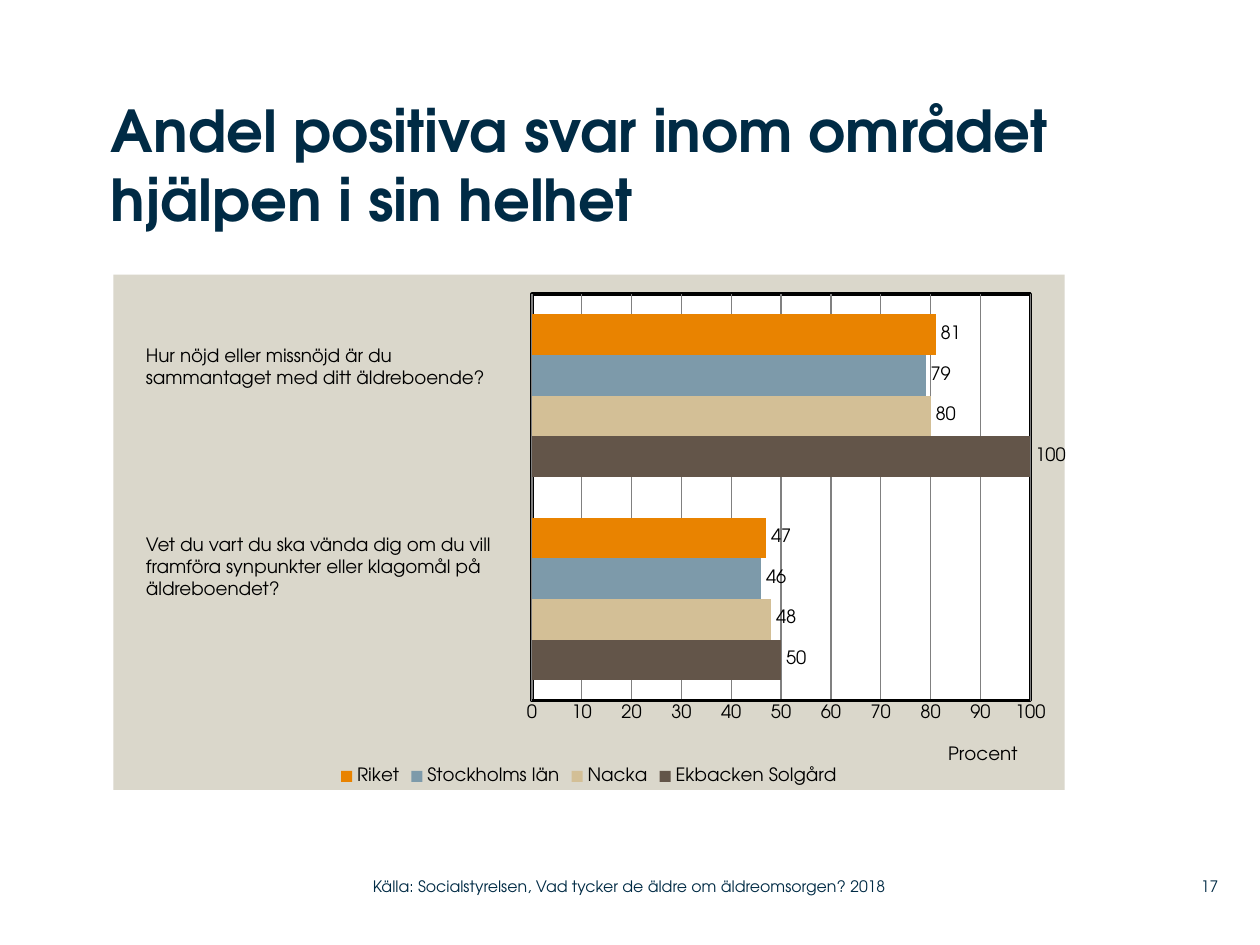
from dataclasses import dataclass

from lxml.etree import SubElement
from pptx import Presentation
from pptx.chart.data import CategoryChartData
from pptx.dml.color import RGBColor
from pptx.enum.chart import XL_CHART_TYPE, XL_LABEL_POSITION, XL_LEGEND_POSITION, XL_TICK_MARK
from pptx.enum.text import MSO_ANCHOR, MSO_AUTO_SIZE, PP_ALIGN
from pptx.oxml import parse_xml
from pptx.oxml.ns import nsdecls, qn
from pptx.util import Inches, Pt


@dataclass(frozen=True)
class Theme:
    font: str = "TeX Gyre Adventor"
    navy: RGBColor = RGBColor(0x00, 0x2B, 0x45)
    black: RGBColor = RGBColor(0, 0, 0)
    white: RGBColor = RGBColor(255, 255, 255)
    sand: RGBColor = RGBColor(0xDA, 0xD7, 0xCB)
    grid: RGBColor = RGBColor(0x80, 0x80, 0x80)
    series: tuple = ("635549", "D3BF96", "7D9AAA", "E98300")
    title: float = 33
    body: float = 10.5
    footer: float = 9


theme = Theme()
deck = Presentation()
deck.slide_width, deck.slide_height = Inches(10), Inches(7.5)
page = deck.slides.add_slide(deck.slide_layouts[5])


def style(font, size, color, bold=False):
    font.name, font.size, font.bold = theme.font, Pt(size), bold
    font.color.rgb = color


def write(box, text, size, color, bold=False, align=PP_ALIGN.LEFT, anchor=MSO_ANCHOR.TOP, inset=True):
    frame = box.text_frame
    frame.text = text
    frame.word_wrap = True
    frame.auto_size = MSO_AUTO_SIZE.NONE
    frame.vertical_anchor = anchor
    if not inset:
        frame.margin_left = frame.margin_right = frame.margin_top = frame.margin_bottom = 0
    for para in frame.paragraphs:
        para.alignment = align
        for span in para.runs:
            style(span.font, size, color, bold)


title = page.shapes.title
title.left, title.top, title.width, title.height = (Inches(n) for n in (0.88, 0.75, 7.6, 1.42))
write(title, "Andel positiva svar inom området hjälpen i sin helhet",
      theme.title, theme.navy, bold=True, inset=False)

# Chart: the first series is drawn lowest in each group
series_table = [
    ("Ekbacken Solgård", (50, 100)),
    ("Nacka", (48, 80)),
    ("Stockholms län", (46, 79)),
    ("Riket", (47, 81)),
]
data = CategoryChartData()
data.categories = ["1", "2"]
for name, values in series_table:
    data.add_series(name, values)
chart = page.shapes.add_chart(XL_CHART_TYPE.BAR_CLUSTERED, Inches(0.9), Inches(2.18),
                              Inches(7.56), Inches(4.09), data).chart
style(chart.font, theme.body, theme.black)
chart.has_title = False
chart.has_legend = True
chart.legend.position = XL_LEGEND_POSITION.BOTTOM
chart.legend.include_in_layout = False
style(chart.legend.font, theme.body, theme.black)

plot = chart.plots[0]
plot.gap_width, plot.overlap, plot.vary_by_categories = 100, 0, False
for series, color in zip(plot.series, theme.series):
    series.format.fill.solid()
    series.format.fill.fore_color.rgb = RGBColor.from_string(color)
    labels = series.data_labels
    labels.show_value = True
    labels.position = XL_LABEL_POSITION.OUTSIDE_END
    style(labels.font, theme.body, theme.black)

chart.category_axis.visible = False
axis = chart.value_axis
axis.minimum_scale, axis.maximum_scale, axis.major_unit = 0, 100, 10
axis.major_tick_mark = axis.minor_tick_mark = XL_TICK_MARK.NONE
axis.format.line.color.rgb = theme.black
axis.format.line.width = Pt(2)
axis.major_gridlines.format.line.color.rgb = theme.grid
axis.major_gridlines.format.line.width = Pt(0.75)
style(axis.tick_labels.font, theme.body, theme.black)
axis.axis_title.text_frame.text = "Procent"
style(axis.axis_title.text_frame.paragraphs[0].runs[0].font, theme.body, theme.black)

# Chart parts placed by shares of the chart's size
plot_area = plot._element.getparent()
axis_title = axis.axis_title._element
placements = [
    (plot_area, 0, dict(layoutTarget="inner", xMode="edge", yMode="edge",
                        x=0.44, y=0.038, w=0.524, h=0.789)),
    (axis_title, 1, dict(xMode="edge", yMode="edge", x=0.874, y=0.907)),
]
for part, position, settings in placements:
    layout = part.find(qn("c:layout"))
    if layout is None:
        layout = part.makeelement(qn("c:layout"))
        part.insert(position, layout)
    manual = SubElement(layout, qn("c:manualLayout"))
    for key, value in settings.items():
        SubElement(manual, qn(f"c:{key}")).set("val", str(value))

area_format = ('<c:spPr {}><a:solidFill><a:srgbClr val="{}"/></a:solidFill>'
               '<a:ln w="{}">{}</a:ln></c:spPr>')
black_line = f'<a:solidFill><a:srgbClr val="{theme.black}"/></a:solidFill>'
plot_area.append(parse_xml(area_format.format(nsdecls("c", "a"), theme.white, Pt(2), black_line)))
plot_area.getparent().addnext(
    parse_xml(area_format.format(nsdecls("c", "a"), theme.sand, 0, "<a:noFill/>")))

questions = [
    ((1.06, 2.68, 2.98, 0.45), "Hur nöjd eller missnöjd är du\nsammantaget med ditt äldreboende?"),
    ((1.06, 4.18, 2.97, 0.63), "Vet du vart du ska vända dig om du vill "
                               "framföra synpunkter eller klagomål på äldreboendet?"),
]
for place, question in questions:
    box = page.shapes.add_textbox(*(Inches(n) for n in place))
    write(box, question, theme.body, theme.black)

footers = [
    (9.2, 0.47, "17", PP_ALIGN.RIGHT),
    (2.96, 4.43, "Källa: Socialstyrelsen, Vad tycker de äldre om äldreomsorgen? 2018", PP_ALIGN.LEFT),
]
for left, width, text, align in footers:
    box = page.shapes.add_textbox(Inches(left), Inches(6.89), Inches(width), Inches(0.29))
    write(box, text, theme.footer, theme.navy, align=align, anchor=MSO_ANCHOR.MIDDLE, inset=False)

deck.save("out.pptx")
